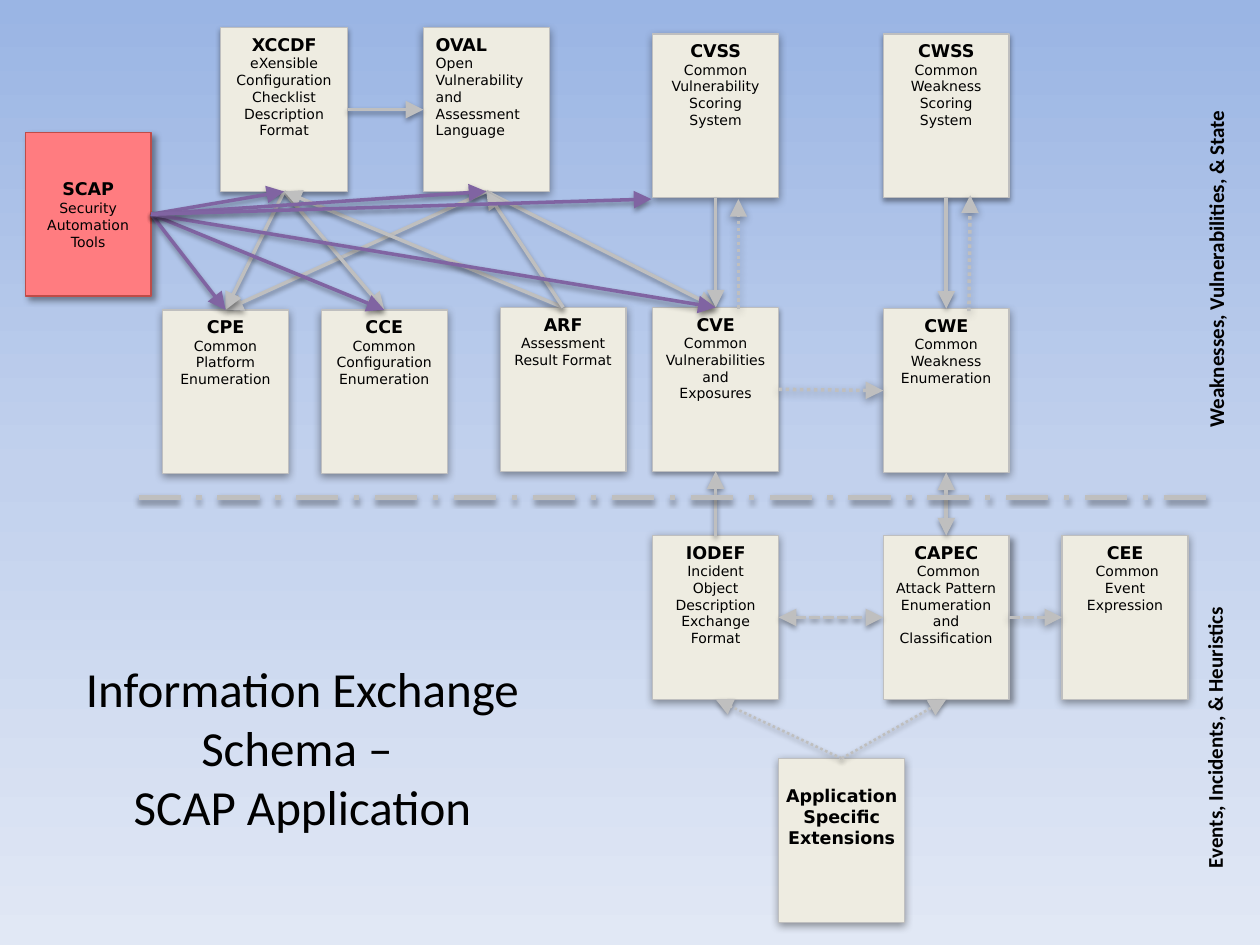
from copy import deepcopy
from typing import Any, NamedTuple

from lxml.etree import SubElement
from pptx import Presentation
from pptx.dml.color import RGBColor
from pptx.enum.dml import MSO_LINE
from pptx.enum.shapes import MSO_CONNECTOR, MSO_SHAPE
from pptx.enum.text import MSO_ANCHOR, MSO_AUTO_SIZE, PP_ALIGN
from pptx.oxml.ns import qn
from pptx.util import Inches, Pt

GRAY, PURPLE, CREAM, BLACK = "BFBFBF", "8064A2", "EEECE1", "000000"
SANS, PLAIN = "DejaVu Sans", "Calibri"
TOP, LEFT, BOTTOM, RIGHT = range(4)  # connection sites of a rectangle
HIGH = 1.3
DOT, DASH = MSO_LINE.ROUND_DOT, MSO_LINE.SQUARE_DOT


class Shade(NamedTuple):
    alpha: int
    blur: float
    dist: float
    angle: int


SOFT, THIN = Shade(38, 5, 1.6, 90), Shade(38, 3.1, 1.6, 90)
DEEP, FLAT = Shade(40, 4, 3, 45), Shade(35, 3.1, 1.8, 90)


class Box(NamedTuple):
    name: str
    text: str
    x: float
    y: float
    shade: Shade = SOFT
    align: Any = PP_ALIGN.CENTER
    fill: str = CREAM
    edge: str = GRAY
    frame: dict = {}
    wide: float = 1


class Link(NamedTuple):
    """An arrow between connection sites of two named boxes."""
    start: str
    exit: int
    end: str
    entry: int
    color: str = GRAY
    dash: Any = None
    width: float = 2
    both: bool = False
    shade: Shade = THIN


class Side(NamedTuple):
    text: str
    x: float
    y: float
    high: float
    wrap: bool


EXT = "Application Specific Extensions"
BOXES = [
    Box("OVAL", "Open Vulnerability and Assessment Language", 3.36, 0.22, align=PP_ALIGN.LEFT),
    Box("CWE", "Common Weakness Enumeration", 7.01, 2.45),
    Box("CVE", "Common Vulnerabilities and Exposures", 5.18, 2.44, THIN),
    Box("CPE", "Common Platform Enumeration", 1.29, 2.46),
    Box("CVSS", "Common Vulnerability Scoring System", 5.18, 0.27),
    Box("CWSS", "Common Weakness Scoring System", 7.01, 0.27, THIN),
    Box("CCE", "Common Configuration Enumeration", 2.55, 2.46),
    Box("XCCDF", "eXensible Configuration Checklist Description Format", 1.75, 0.22, THIN,
        wide=1.01),
    Box("ARF", "Assessment Result Format", 3.97, 2.44),
    Box("CEE", " Common Event Expression", 8.43, 4.25),
    Box("IODEF", "Incident Object Description Exchange Format", 5.18, 4.25),
    Box("CAPEC", " Common Attack Pattern Enumeration and Classification", 7.01, 4.25, DEEP),
    Box(EXT, "", 6.18, 6.02,
        frame={"margin_left": Inches(0.05), "margin_right": Inches(0.05),
               "margin_top": Inches(0.21)}),
    Box("SCAP", "Security\nAutomation\nTools", 0.2, 1.05, DEEP, fill="FF7C80", edge="BF4C48",
        frame={"margin_left": 0, "margin_right": 0, "vertical_anchor": MSO_ANCHOR.MIDDLE}),
]

LINKS = [
    Link("XCCDF", RIGHT, "OVAL", LEFT),
    Link("OVAL", BOTTOM, "CVE", TOP),
    Link("CVSS", BOTTOM, "CVE", TOP),
    Link("OVAL", BOTTOM, "CPE", TOP),
    Link("XCCDF", BOTTOM, "CCE", TOP),
    Link("XCCDF", BOTTOM, "CPE", TOP),
    Link("CWSS", BOTTOM, "CWE", TOP),
    Link("CWE", BOTTOM, "CAPEC", TOP, both=True),
    Link("IODEF", TOP, "CVE", BOTTOM),
    Link(EXT, TOP, "IODEF", BOTTOM, dash=DOT, width=1.5),
    Link("IODEF", RIGHT, "CAPEC", LEFT, dash=DASH, both=True),
    Link("ARF", TOP, "XCCDF", BOTTOM),
    Link("ARF", TOP, "OVAL", BOTTOM),
    Link("CVE", RIGHT, "CWE", LEFT, dash=DOT, shade=SOFT),
    Link("CAPEC", RIGHT, "CEE", LEFT, dash=DASH, shade=SOFT),
    Link(EXT, TOP, "CAPEC", BOTTOM, dash=DOT, width=1.5),
    *(Link("SCAP", RIGHT, name, site, PURPLE) for name, site in
      [("XCCDF", BOTTOM), ("CPE", TOP), ("CCE", TOP), ("OVAL", BOTTOM), ("CVE", TOP)]),
]

SIDES = [
    Side("Events, Incidents, & Heuristics", 9.49, 4.43, 2.56, False),
    Side("Weaknesses, Vulnerabilities, & State", 9.5, 0.27, 3.22, True),
]


def tint(code: str) -> RGBColor:
    return RGBColor.from_string(code)


def setup(target: Any, values: dict) -> None:
    for key, value in values.items():
        setattr(target, key, value)


def cast(item: Any, shade: Shade) -> None:
    """Give a shape or connector an outer shadow."""
    effects = SubElement(item._element.spPr, qn("a:effectLst"))
    outer = SubElement(effects, qn("a:outerShdw"), blurRad=str(Pt(shade.blur)),
                       dist=str(Pt(shade.dist)), dir=str(shade.angle * 60000), rotWithShape="0")
    color = SubElement(outer, qn("a:srgbClr"), val=BLACK)
    SubElement(color, qn("a:alpha"), val=str(shade.alpha * 1000))


def write(para: Any, text: str, size: float, bold: bool, face: str, align: Any) -> None:
    para.alignment = align
    run = para.add_run()
    run.text = text
    setup(run.font, {"size": Pt(size), "bold": bold, "name": face})
    run.font.color.rgb = tint(BLACK)


def draw_box(slide: Any, box: Box) -> Any:
    shape = slide.shapes.add_shape(MSO_SHAPE.RECTANGLE, Inches(box.x), Inches(box.y),
                                   Inches(box.wide), Inches(HIGH))
    shape.fill.solid()
    shape.fill.fore_color.rgb = tint(box.fill)
    shape.line.color.rgb = tint(box.edge)
    shape.line.width = Pt(0.75)
    cast(shape, box.shade)
    frame = shape.text_frame
    setup(frame, {"word_wrap": True, "vertical_anchor": MSO_ANCHOR.TOP} | box.frame)
    write(frame.paragraphs[0], box.name, 10, True, SANS, box.align)
    for line in box.text.splitlines():
        write(frame.add_paragraph(), line, 8, False, SANS, box.align)
    return shape


def draw_line(slide: Any, ends: tuple, color: str = GRAY, width: float = 2, dash: Any = None,
              tips: tuple = ("tailEnd",), shade: Shade = THIN, glue: tuple = ()) -> None:
    line = slide.shapes.add_connector(MSO_CONNECTOR.STRAIGHT, *map(Inches, ends))
    if glue:
        start, leave, end, entry = glue
        line.begin_connect(start, leave)
        line.end_connect(end, entry)
    line.line.color.rgb = tint(color)
    setup(line.line, {"width": Pt(width), "dash_style": dash})
    for tip in tips:
        SubElement(line.line._get_or_add_ln(), qn(f"a:{tip}"), type="triangle", w="lg", len="lg")
    cast(line, shade)


def draw_side(slide: Any, side: Side) -> None:
    """Write a label that reads upwards."""
    label = slide.shapes.add_textbox(Inches(side.x), Inches(side.y), Inches(0.4),
                                     Inches(side.high))
    frame = label.text_frame
    frame.word_wrap = side.wrap
    frame._txBody.bodyPr.set("vert", "vert270")
    write(frame.paragraphs[0], side.text, 12, True, PLAIN, PP_ALIGN.LEFT)


def paint(slide: Any) -> None:
    """Fill the background with a gradient from top to bottom."""
    fill = slide.background.fill
    fill.gradient()
    fill.gradient_angle = 270
    stops = slide._element.find(".//" + qn("a:gsLst"))
    stops.insert(1, deepcopy(stops[0]))
    for stop, place, code in zip(fill.gradient_stops, (0, 0.5, 1), ("9AB5E4", "C2D1ED", "E1E8F5")):
        stop.position = place
        stop.color.rgb = tint(code)


def main() -> None:
    deck = Presentation()
    setup(deck, {"slide_width": Inches(10), "slide_height": Inches(7.5)})
    slide = deck.slides.add_slide(deck.slide_layouts[5])
    paint(slide)
    title = slide.shapes.title
    setup(title, {"left": Inches(0.3), "top": Inches(5.18), "width": Inches(4.2),
                  "height": Inches(1.65)})
    frame = title.text_frame
    setup(frame, {"word_wrap": True, "vertical_anchor": MSO_ANCHOR.TOP,
                  "auto_size": MSO_AUTO_SIZE.NONE})
    para = frame.paragraphs[0]
    write(para, "Information Exchange Schema – ", 28, False, PLAIN, PP_ALIGN.CENTER)
    para.add_line_break()
    para._p.find(qn("a:br")).append(deepcopy(para.runs[0]._r.rPr))
    write(para, "SCAP Application", 28, False, PLAIN, PP_ALIGN.CENTER)

    shapes = {box.name: draw_box(slide, box) for box in BOXES}
    for link in LINKS:
        tips = ("headEnd", "tailEnd") if link.both else ("tailEnd",)
        draw_line(slide, (0, 0, 1, 1), link.color, link.width, link.dash, tips, link.shade,
                  (shapes[link.start], link.exit, shapes[link.end], link.entry))
    for ends in [(5.86, 2.45, 5.86, 1.58), (7.69, 2.47, 7.7, 1.55)]:
        draw_line(slide, ends, dash=DOT, shade=SOFT)
    draw_line(slide, (1.2, 1.7, 5.17, 1.58), PURPLE)
    draw_line(slide, (1.1, 3.95, 9.6, 3.95), width=3, dash=MSO_LINE.LONG_DASH_DOT, tips=(),
              shade=FLAT)
    for side in SIDES:
        draw_side(slide, side)
    deck.save("out.pptx")


if __name__ == "__main__":
    main()
